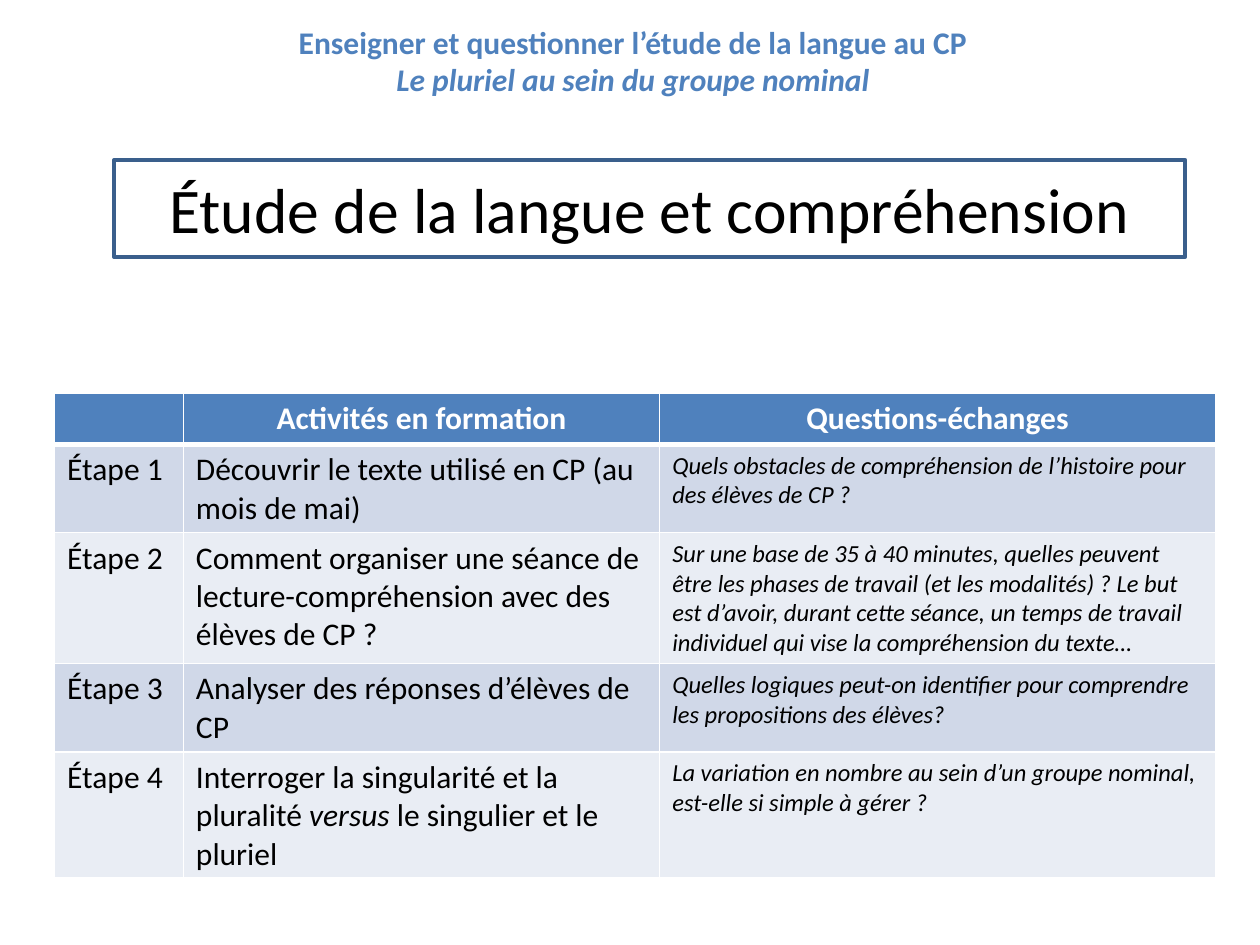
from dataclasses import dataclass

from lxml import etree
from pptx import Presentation
from pptx.dml.color import RGBColor
from pptx.enum import shapes, text
from pptx.oxml import ns
from pptx.util import Pt


@dataclass(frozen=True)
class Theme:
    font: str = "Calibri"
    blue: str = "4F81BD"
    frame: str = "3A5F8C"
    ink: str = "000000"
    white: str = "FFFFFF"
    bands: tuple = ("D0D8E8", "E9EDF4")
    title: float = 36.3
    body: float = 18
    question: float = 14


class Deck:
    def __init__(self, theme):
        self.theme = theme
        self.prs = Presentation()
        self.prs.slide_width, self.prs.slide_height = Pt(720), Pt(540)
        self.slide = self.prs.slides.add_slide(self.prs.slide_layouts[6])

    def format(self, p, size, color, bold=False, italic=False, align=None):
        p.alignment = align
        for r in p.runs:
            r.font.name = self.theme.font
            r.font.size = Pt(size)
            r.font.color.rgb = RGBColor.from_string(color)
            r.font.bold = bold
            r.font.italic = italic

    def heading(self, box, main, subtitle):
        tf = self.slide.shapes.add_textbox(*map(Pt, box)).text_frame
        tf.word_wrap = True
        tf.auto_size = text.MSO_AUTO_SIZE.SHAPE_TO_FIT_TEXT
        tf.text = f"{main}\n{subtitle}"
        for p, italic in zip(tf.paragraphs, (False, True)):
            self.format(p, self.theme.body, self.theme.blue, True, italic,
                        text.PP_ALIGN.CENTER)

    def framed_title(self, box, title):
        sp = self.slide.shapes.add_shape(shapes.MSO_SHAPE.RECTANGLE, *map(Pt, box))
        sp.shadow.inherit = False
        sp.fill.background()
        sp.line.color.rgb = RGBColor.from_string(self.theme.frame)
        sp.line.width = Pt(2.25)
        tf = sp.text_frame
        tf.word_wrap = True
        tf.vertical_anchor = text.MSO_ANCHOR.MIDDLE
        tf.text = title
        self.format(tf.paragraphs[0], self.theme.title, self.theme.ink,
                    align=text.PP_ALIGN.CENTER)

    def cell_borders(self, cell, top=1, bottom=1):
        tcPr = cell._tc.get_or_add_tcPr()
        widths = {"lnL": 1, "lnR": 1, "lnT": top, "lnB": bottom}
        for i, (tag, width) in enumerate(widths.items()):
            ln = etree.Element(ns.qn(f"a:{tag}"), w=str(Pt(width)))
            fill = etree.SubElement(ln, ns.qn("a:solidFill"))
            etree.SubElement(fill, ns.qn("a:srgbClr"), val=self.theme.white)
            tcPr.insert(i, ln)

    def cell(self, cell, words, fill, **style):
        """Fill one cell; words between asterisks are set in italics."""
        cell.fill.solid()
        cell.fill.fore_color.rgb = RGBColor.from_string(fill)
        first, *rest = words.split("*")
        p = cell.text_frame.paragraphs[0]
        p.text = first
        for part in rest:
            p.add_run().text = part
        self.format(p, **style)
        for r in p.runs[1::2]:
            r.font.italic = True

    def table(self, left, top, widths, heights, rows):
        th = self.theme
        table = self.slide.shapes.add_table(
            len(rows), len(widths), Pt(left), Pt(top),
            Pt(sum(widths)), Pt(sum(heights))).table
        for column, width in zip(table.columns, widths):
            column.width = Pt(width)
        for i, (height, row) in enumerate(zip(heights, rows)):
            table.rows[i].height = Pt(height)
            for j, words in enumerate(row):
                if i == 0:
                    fill = th.blue
                    style = dict(size=th.body, color=th.white, bold=True,
                                 align=text.PP_ALIGN.CENTER)
                else:
                    fill = th.bands[(i - 1) % 2]
                    question = j == 2
                    style = dict(size=th.question if question else th.body,
                                 color=th.ink, italic=question)
                cell = table.cell(i, j)
                self.cell(cell, words, fill, **style)
                self.cell_borders(cell, top=3 if i == 1 else 1,
                                  bottom=3 if i == 0 else 1)


ROWS = [
    ("", "Activités en formation", "Questions-échanges"),
    ("Étape 1", "Découvrir le texte utilisé en CP (au mois de mai)",
     "Quels obstacles de compréhension de l’histoire pour des élèves de CP ?"),
    ("Étape 2",
     "Comment organiser une séance de lecture-compréhension avec des élèves de CP ?",
     "Sur une base de 35 à 40 minutes, quelles peuvent être les phases de travail "
     "(et les modalités) ? Le but est d’avoir, durant cette séance, un temps de "
     "travail individuel qui vise la compréhension du texte…"),
    ("Étape 3", "Analyser des réponses d’élèves de CP",
     "Quelles logiques peut-on identifier pour comprendre les propositions des élèves?"),
    ("Étape 4",
     "Interroger la singularité et la pluralité *versus* le singulier et le pluriel",
     "La variation en nombre au sein d’un groupe nominal, est-elle si simple à gérer ?"),
]


def main():
    deck = Deck(Theme())
    deck.heading((161.3, 9.4, 401, 51),
                 "Enseigner et questionner l’étude de la langue au CP",
                 "Le pluriel au sein du groupe nominal")
    deck.framed_title((65.3, 91.4, 612, 55.5), "Étude de la langue et compréhension")
    deck.table(31.2, 224.8, (73.6, 272.2, 317.6), (29.2, 50.4, 74.8, 50.4, 72), ROWS)
    deck.prs.save("out.pptx")


if __name__ == "__main__":
    main()
